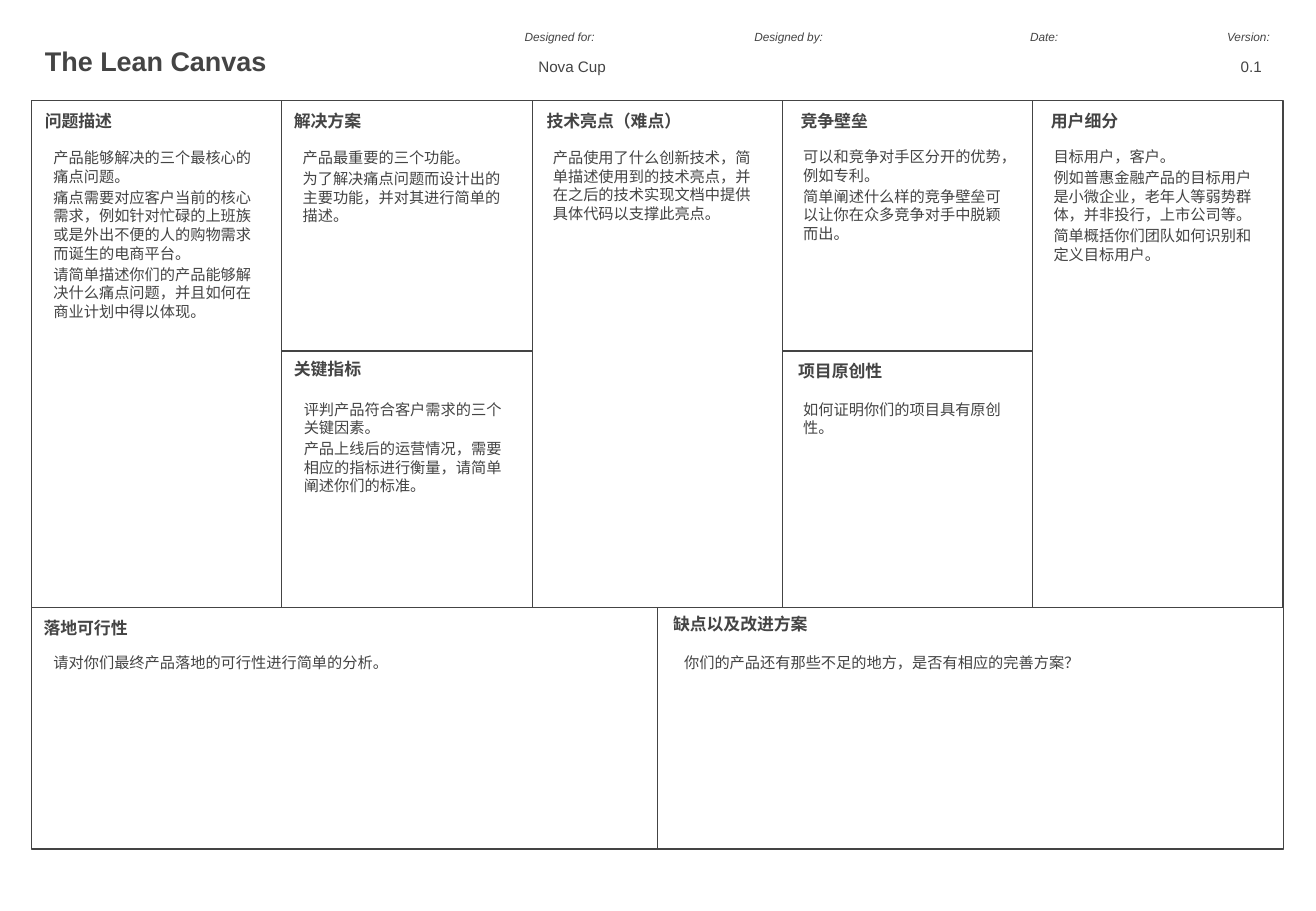
import pptx
import pptx.dml.color
import pptx.enum.shapes
import pptx.enum.text
import pptx.oxml
import pptx.oxml.ns
import pptx.util
from pptx.util import Inches

COLORS = {"ink": "444444", "paper": "FFFFFF"}
LATIN, CJK = "Arial", "Noto Sans CJK SC"

# Font attributes and exact line height in points
STYLES = {
    "title": ({"size": pptx.util.Pt(16), "bold": True}, 18.5),
    "label": ({"size": pptx.util.Pt(7), "italic": True}, 8),
    "heading": ({"size": pptx.util.Pt(10), "bold": True}, 12),
    "note": ({"size": pptx.util.Pt(9)}, 11),
}

LEFT, TOP, COLUMN = 0.26, 0.83, 2.06
UPPER, LOWER, BOTTOM = 2.06, 2.11, 1.99
FULL = UPPER + LOWER
HALF = 2.5 * COLUMN
MIDDLE, BASE = TOP + UPPER, TOP + FULL
COLUMNS = [LEFT + COLUMN * number for number in range(5)]

# Cell box, heading offset, notes offset, heading, notes
CELLS = [
    ((COLUMNS[0], TOP, COLUMN, FULL), (0.01, 0.03), (0.08, 0.34), "问题描述", [
        "产品能够解决的三个最核心的痛点问题。",
        "痛点需要对应客户当前的核心需求，例如针对忙碌的上班族或是外出不便的人的购物需求而诞生的电商平台。",
        "请简单描述你们的产品能够解决什么痛点问题，并且如何在商业计划中得以体现。"]),
    ((COLUMNS[1], TOP, COLUMN, UPPER), (0, 0.03), (0.07, 0.34), "解决方案", [
        "产品最重要的三个功能。",
        "为了解决痛点问题而设计出的主要功能，并对其进行简单的描述。"]),
    ((COLUMNS[1], MIDDLE, COLUMN, LOWER), (0, 0.01), (0.08, 0.35), "关键指标", [
        "评判产品符合客户需求的三个关键因素。",
        "产品上线后的运营情况，需要相应的指标进行衡量，请简单阐述你们的标准。"]),
    ((COLUMNS[2], TOP, COLUMN, FULL), (0.02, 0.03), (0.07, 0.34), "技术亮点（难点）", [
        "产品使用了什么创新技术，简单描述使用到的技术亮点，并在之后的技术实现文档中提供具体代码以支撑此亮点。"]),
    ((COLUMNS[3], TOP, COLUMN, UPPER), (0.05, 0.03), (0.07, 0.33), "竞争壁垒", [
        "可以和竞争对手区分开的优势，例如专利。",
        "简单阐述什么样的竞争壁垒可以让你在众多竞争对手中脱颖而出。"]),
    ((COLUMNS[3], MIDDLE, COLUMN, LOWER), (0.03, 0.03), (0.07, 0.35), "项目原创性", [
        "如何证明你们的项目具有原创性。"]),
    ((COLUMNS[4], TOP, COLUMN, FULL), (0.05, 0.03), (0.07, 0.33), "用户细分", [
        "目标用户，客户。",
        "例如普惠金融产品的目标用户是小微企业，老年人等弱势群体，并非投行，上市公司等。",
        "简单概括你们团队如何识别和定义目标用户。"]),
    ((LEFT, BASE, HALF, BOTTOM), (0, 0.04), (0.08, 0.33), "落地可行性", [
        "请对你们最终产品落地的可行性进行简单的分析。"]),
    ((LEFT + HALF, BASE, HALF, BOTTOM), (0.03, 0), (0.12, 0.33), "缺点以及改进方案", [
        "你们的产品还有那些不足的地方，是否有相应的完善方案？"]),
]

LABELS = [("Designed for:", 4.22, 1.53), ("Designed by:", 6.11, 1.53),
          ("Date:", 8.38, 1.33), ("Version:", 10, 0.68)]
ENTRIES = [("Nova Cup", 4.33, 1.53), ("0.1", 10.11, 0.45)]


def rgb(name):
    return pptx.dml.color.RGBColor.from_string(COLORS[name])


def place(shape, box):
    for side, length in zip(("left", "top", "width", "height"), box):
        setattr(shape, side, Inches(length))


def write(shape, lines, style):
    """Fill a shape with plain left-aligned paragraphs in a named style."""
    font_values, leading = STYLES[style]
    frame = shape.text_frame
    frame_values = {
        "word_wrap": True,
        "auto_size": pptx.enum.text.MSO_AUTO_SIZE.NONE,
        "vertical_anchor": pptx.enum.text.MSO_ANCHOR.TOP,
        "margin_left": Inches(0.1), "margin_right": Inches(0.1),
        "margin_top": Inches(0.05), "margin_bottom": Inches(0.05),
    }
    for name, value in frame_values.items():
        setattr(frame, name, value)
    for number, line in enumerate(lines):
        paragraph = frame.add_paragraph() if number else frame.paragraphs[0]
        properties = paragraph._p.get_or_add_pPr()
        properties.set("marL", "0")
        properties.set("indent", "0")
        pptx.oxml.ns.qn("a:buNone")
        properties.append(pptx.oxml.parse_xml(
            f'<a:buNone {pptx.oxml.ns.nsdecls("a")}/>'))
        paragraph.alignment = pptx.enum.text.PP_ALIGN.LEFT
        paragraph.line_spacing = pptx.util.Pt(leading)
        paragraph.space_before = pptx.util.Pt(1.5 if number else 0)
        run = paragraph.add_run()
        run.text = line
        for name, value in {"name": LATIN, **font_values}.items():
            setattr(run.font, name, value)
        run.font.color.rgb = rgb("ink")
        run._r.get_or_add_rPr().append(pptx.oxml.parse_xml(
            f'<a:ea {pptx.oxml.ns.nsdecls("a")} typeface="{CJK}"/>'))


def add_label(slide, box, text, style):
    label = slide.shapes.add_textbox(*map(Inches, box))
    write(label, [text], style)


def add_body(slide, box, lines):
    """Add one more body placeholder of the layout in the given box."""
    slide.shapes.clone_placeholder(slide.slide_layout.placeholders[1])
    body = slide.shapes[-1]
    place(body, box)
    body.fill.solid()
    body.fill.fore_color.rgb = rgb("paper")
    write(body, lines, "note")


def add_header(slide, left, top):
    title = slide.shapes.title
    place(title, (left, top + 0.13, 2.26, 0.37))
    write(title, ["The Lean Canvas"], "title")
    for text, x, width in LABELS:
        add_label(slide, (x, top, width, 0.22), text, "label")
    for text, x, width in ENTRIES:
        add_body(slide, (x, top + 0.22, width, 0.25), [text])


def add_cell(slide, box, heading_offset, notes_offset, heading, notes):
    left, top, width, height = box
    frame = slide.shapes.add_shape(
        pptx.enum.shapes.MSO_SHAPE.RECTANGLE, *map(Inches, box))
    frame.shadow.inherit = False
    frame.fill.background()
    frame.line.color.rgb = rgb("ink")
    frame.line.width = pptx.util.Pt(0.75)
    dx, dy = heading_offset
    add_label(slide, (left + dx, top + dy, 1.91, 0.27), heading, "heading")
    dx, dy = notes_offset
    add_body(slide, (left + dx, top + dy, width - 0.14 - max(0, dx - 0.08),
                     height - 0.42), notes)


def main():
    deck = pptx.Presentation()
    deck.slide_width, deck.slide_height = Inches(10.83), Inches(7.5)
    slide = deck.slides.add_slide(deck.slide_layouts[1])
    spare = slide.placeholders[1].element
    spare.getparent().remove(spare)
    add_header(slide, 0.27, 0.2)
    for cell in CELLS:
        add_cell(slide, *cell)
    deck.save("out.pptx")


if __name__ == "__main__":
    main()
